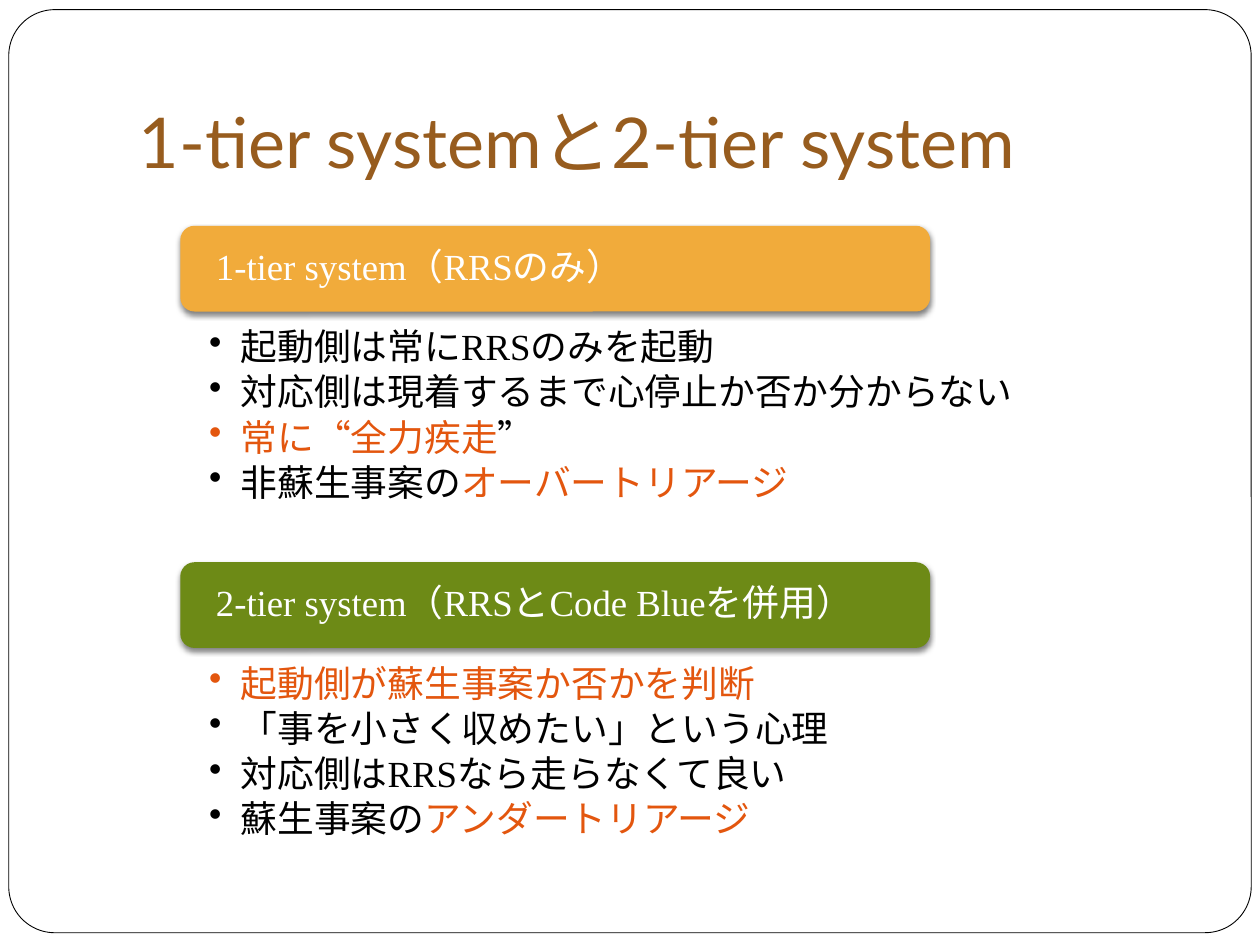
"""Build a slide comparing one-tier and two-tier rapid response systems."""
import pptx
import pptx.util
import pptx.oxml
import pptx.oxml.ns
import pptx.dml.color
import pptx.enum.shapes
import pptx.enum.text

Pt = pptx.util.Pt
Kind = pptx.enum.shapes.MSO_SHAPE
Anchor = pptx.enum.text.MSO_ANCHOR
Align = pptx.enum.text.PP_ALIGN
NS = pptx.oxml.ns.nsdecls("a")
HUES = {"white": "FFFFFF", "black": "000000", "title": "975C1E",
        "amber": "F1AB3B", "green": "6D8A16", "alert": "E3560E"}
TIERS = [
    ("1-tier system（RRSのみ）", "amber", [
        [("起動側は常にRRSのみを起動", "black")],
        [("対応側は現着するまで心停止か否か分からない", "black")],
        [("常に“全力疾走", "alert"), ("”", "black")],
        [("非蘇生事案の", "black"), ("オーバートリアージ", "alert")]]),
    ("2-tier system（RRSとCode Blueを併用）", "green", [
        [("起動側が蘇生事案か否かを判断", "alert")],
        [("「事を小さく収めたい」という心理", "black")],
        [("対応側はRRSなら走らなくて良い", "black")],
        [("蘇生事案の", "black"), ("アンダートリアージ", "alert")]]),
]


class Deck:
    def __init__(self):
        self.file = pptx.Presentation()
        self.file.slide_width, self.file.slide_height = Pt(720), Pt(540)
        self.slide = self.file.slides.add_slide(self.file.slide_layouts[5])
        self.face, self.size = "Times New Roman", 21

    def hue(self, name):
        return pptx.dml.color.RGBColor.from_string(HUES[name])

    def shape(self, kind, box, fill):
        item = self.slide.shapes.add_shape(kind, *map(Pt, box))
        item.shadow.inherit = False
        item.fill.solid()
        item.fill.fore_color.rgb = self.hue(fill)
        item.line.fill.background()
        return item

    def frame(self, box):
        item = self.shape(Kind.ROUNDED_RECTANGLE, box, "white")
        item.adjustments[0] = 0.05
        item.line.color.rgb = self.hue("black")
        item.line.width = Pt(0.5)
        self.slide.shapes.title.element.addprevious(item.element)

    def inset(self, item, pads, anchor):
        text = item.text_frame
        text.word_wrap = True
        text.vertical_anchor = anchor
        (text.margin_left, text.margin_top,
         text.margin_right, text.margin_bottom) = map(Pt, pads)
        return text

    def label(self, para, runs, face, size):
        para.alignment = Align.LEFT
        para.font.name, para.font.size = face, Pt(size)
        for words, hue in runs:
            run = para.add_run()
            run.text = words
            run.font.color.rgb = self.hue(hue)

    def title(self, box, words):
        item = self.slide.shapes.title
        item.left, item.top, item.width, item.height = map(Pt, box)
        text = self.inset(item, (7.2, 3.6, 7.2, 7.2), Anchor.BOTTOM)
        self.label(text.paragraphs[0], [(words, "title")], "Lato", 40)

    def panel(self, box, rows):
        item = self.shape(Kind.RECTANGLE, box, "white")
        text = self.inset(item, (47.5, 34.5, 47.5, 11.5), Anchor.TOP)
        for i, runs in enumerate(rows):
            para = text.add_paragraph() if i else text.paragraphs[0]
            props = para._p.get_or_add_pPr()
            props.set("marL", str(Pt(18)))
            props.set("indent", str(-Pt(18)))
            props.append(pptx.oxml.parse_xml(f'<a:buChar {NS} char="•"/>'))
            para.line_spacing, para.space_after = 0.9, Pt(3.15)
            self.label(para, runs, self.face, self.size)

    def header(self, box, words, fill):
        item = self.shape(Kind.ROUNDED_RECTANGLE, box, fill)
        glow = item.element.spPr.find(pptx.oxml.ns.qn("a:effectLst"))
        glow.append(pptx.oxml.parse_xml(
            f'<a:outerShdw {NS} blurRad="{Pt(3)}" dist="{Pt(2)}" '
            'dir="5400000" rotWithShape="0"><a:srgbClr val="000000">'
            '<a:alpha val="50000"/></a:srgbClr></a:outerShdw>'))
        text = self.inset(item, (18, 0, 18, 0), Anchor.MIDDLE)
        para = text.paragraphs[0]
        para.line_spacing = 0.9
        self.label(para, [(words, "white")], self.face, self.size)


def main():
    deck = Deck()
    deck.frame((5, 5.5, 710, 527.5))
    deck.title((72, 21.6, 612, 90), "1-tier systemと2-tier system")
    for i, (head, fill, rows) in enumerate(TIERS):
        top = 129 + 192.25 * i
        deck.panel((72, top + 24.5, 612, 159), rows)
        deck.header((103, top, 428.5, 49), head, fill)
    deck.file.save("out.pptx")


if __name__ == "__main__":
    main()
